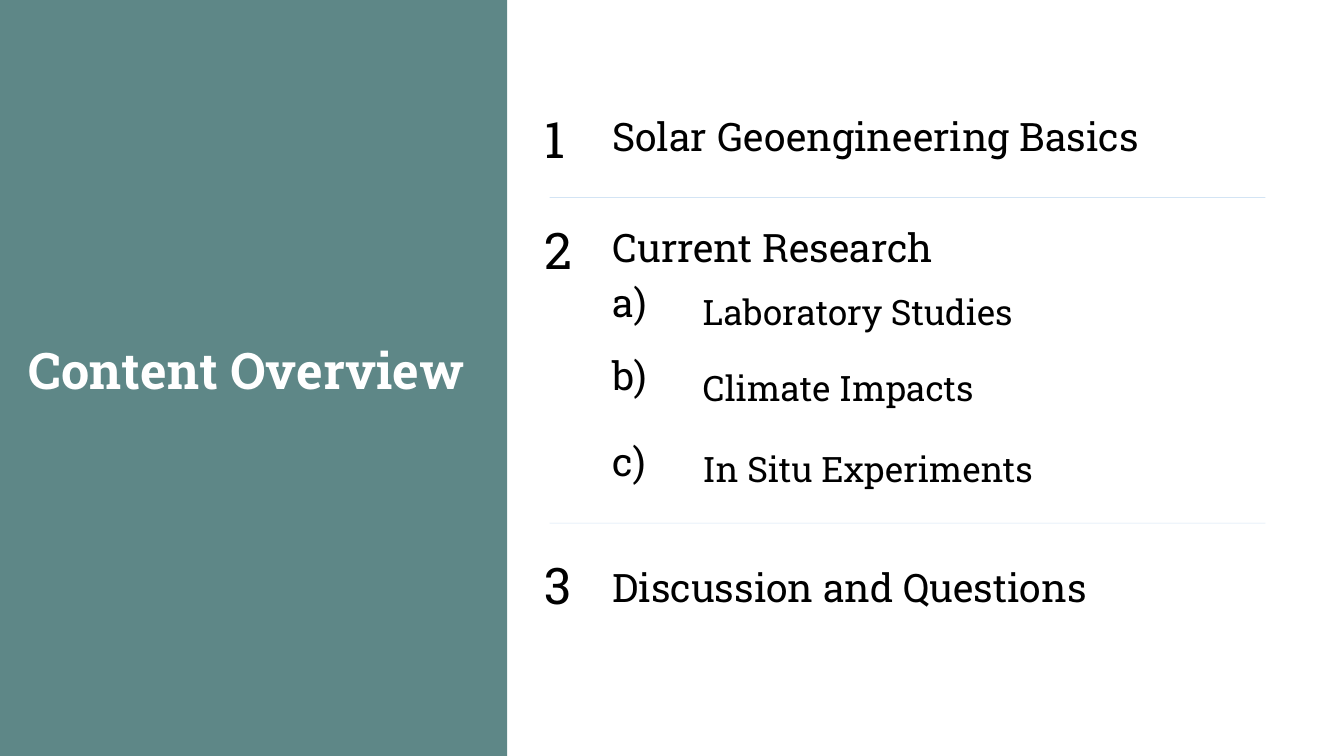
import pptx
import pptx.util
import pptx.dml.color
import pptx.enum.shapes
import pptx.enum.text
import pptx.oxml.ns
import lxml.etree

Inches = pptx.util.Inches
COLORS = {"panel": "004242", "rule": "9DC3E6", "text": "000000", "title": "FFFFFF"}
FONT = "Roboto Slab"


class Overview:
    """Style and current page of the content overview."""

    def __init__(self, page):
        self.page = page

    def color(self, name):
        return pptx.dml.color.RGBColor.from_string(COLORS[name])

    def fade(self, properties, percent):
        tag = pptx.oxml.ns.qn("a:alpha")
        for color in properties.iter(pptx.oxml.ns.qn("a:srgbClr")):
            lxml.etree.SubElement(color, tag).set("val", str(percent * 1000))

    def style_text(self, box, text, size, color="text", bold=False):
        frame = box.text_frame
        frame.text = text
        frame.word_wrap = True
        frame.auto_size = pptx.enum.text.MSO_AUTO_SIZE.SHAPE_TO_FIT_TEXT
        frame.vertical_anchor = pptx.enum.text.MSO_ANCHOR.TOP
        font = frame.paragraphs[0].runs[0].font
        font.name, font.size, font.bold = FONT, pptx.util.Pt(size), bold
        font.color.rgb = self.color(color)

    def panel(self, left, top, width, height):
        box = self.page.shapes.add_shape(
            pptx.enum.shapes.MSO_SHAPE.RECTANGLE,
            Inches(left), Inches(top), Inches(width), Inches(height))
        box.shadow.inherit = False
        box.fill.solid()
        box.fill.fore_color.rgb = self.color("panel")
        box.line.fill.background()
        self.fade(box.element.spPr, 63)

    def title(self, text, left, top, width, height):
        box = self.page.shapes.title
        box.left, box.top = Inches(left), Inches(top)
        box.width, box.height = Inches(width), Inches(height)
        self.style_text(box, text, 36, "title", True)
        box.text_frame.paragraphs[0].alignment = pptx.enum.text.PP_ALIGN.CENTER
        self.page.shapes.element.append(box.element)

    def label(self, text, left, top, width, height, size):
        box = self.page.shapes.add_textbox(
            Inches(left), Inches(top), Inches(width), Inches(height))
        self.style_text(box, text, size)

    def rule(self, top):
        line = self.page.shapes.add_connector(
            pptx.enum.shapes.MSO_CONNECTOR.STRAIGHT,
            Inches(5.45), Inches(top), Inches(12.55), Inches(top))
        line.line.color.rgb = self.color("rule")
        line.line.width = pptx.util.Pt(0.5)
        properties = line.element.spPr
        self.fade(properties, 44)
        lxml.etree.SubElement(properties, pptx.oxml.ns.qn("a:effectLst"))


def main():
    deck = pptx.Presentation()
    deck.slide_width, deck.slide_height = Inches(13.33), Inches(7.5)
    overview = Overview(deck.slides.add_slide(deck.slide_layouts[5]))
    overview.panel(0, 0, 5.03, 7.5)
    overview.title("Content Overview ", 0, 3.31, 5.02, 0.71)

    sections = [("1", 1.02, "Solar Geoengineering Basics", 1.07),
                ("2", 2.12, "Current Research", 2.17),
                ("3", 5.45, "Discussion and Questions", 5.54)]
    for number, number_top, heading, heading_top in sections:
        overview.label(number, 5.3, number_top, 0.68, 0.71, 36)
        overview.label(heading, 5.98, heading_top, 7.19, 0.57, 28)

    topics = [("a)", 2.71, "Laboratory Studies", 2.83),
              ("b)", 3.44, "Climate Impacts", 3.59),
              ("c)", 4.29, "In Situ Experiments", 4.39)]
    for letter, letter_top, topic, topic_top in topics:
        overview.label(letter, 5.98, letter_top, 0.9, 0.57, 28)
        overview.label(topic, 6.87, topic_top, 4.47, 0.54, 25)

    for top in (1.96, 5.19):
        overview.rule(top)
    deck.save("out.pptx")


if __name__ == "__main__":
    main()
